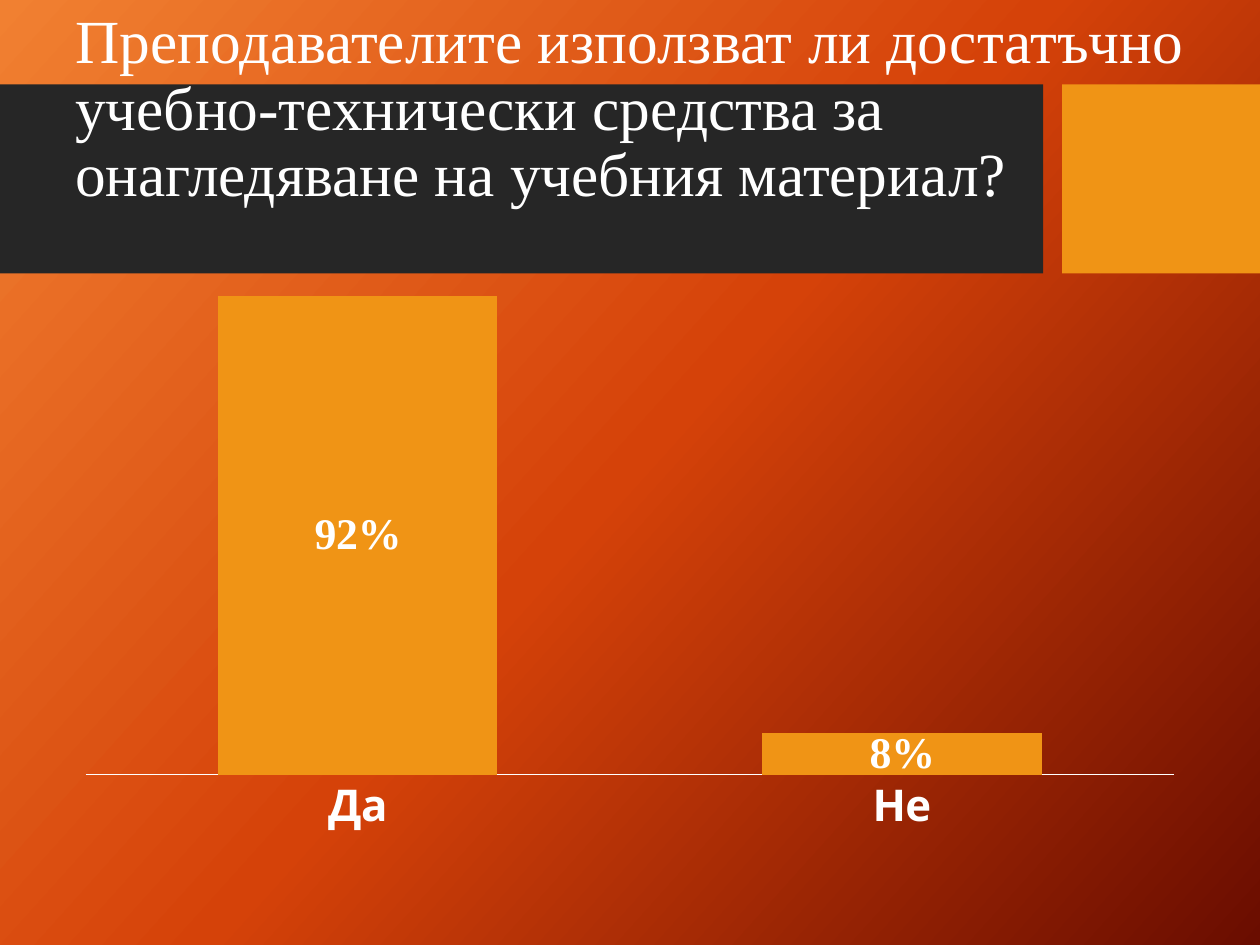
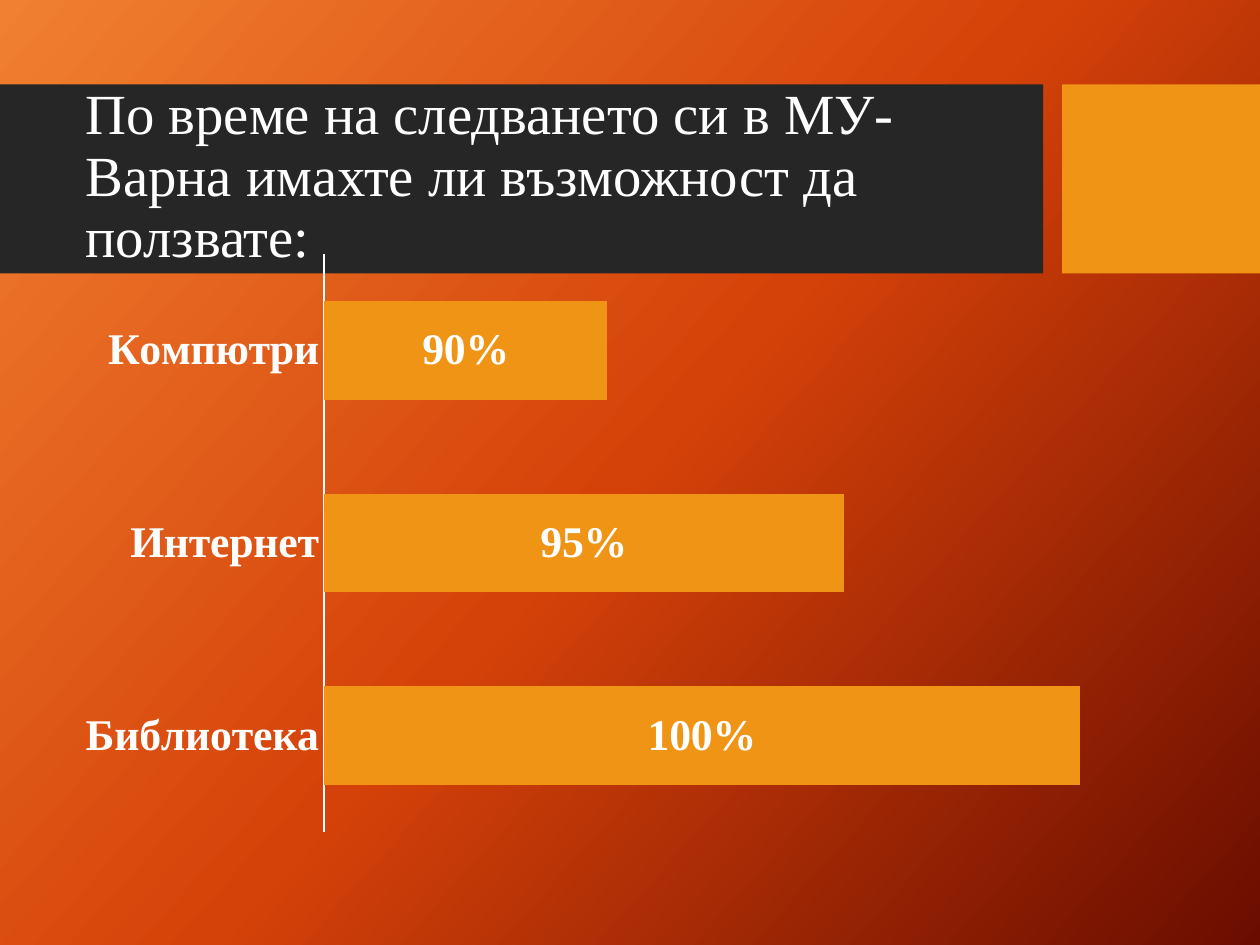
from copy import deepcopy

from pptx import Presentation
from pptx.chart.data import CategoryChartData
from pptx.dml.color import RGBColor
from pptx.enum.chart import XL_CHART_TYPE, XL_LABEL_POSITION, XL_TICK_MARK
from pptx.enum.shapes import MSO_SHAPE
from pptx.enum.text import MSO_ANCHOR
from pptx.util import Inches, Pt

WHITE, DARK, ORANGE = "FFFFFF", "262626", "F09415"
GRADIENT = [(0, "F18031"), (0.5, "D54209"), (1, "6A0D00")]
SERIF, SANS = "Times New Roman", "Cabin"


def color(value):
    """Turn a hex string into a colour."""
    return RGBColor.from_string(value)


def apply(target, values):
    """Set every attribute in a dict of format values."""
    for name, value in values.items():
        setattr(target, name, value)


class SurveyDeck:
    """Hold the survey style and the slide being built."""

    def __init__(self):
        """Start an empty 10 by 7.5 inch presentation."""
        self.presentation = Presentation()
        apply(self.presentation, {"slide_width": Inches(10), "slide_height": Inches(7.5)})
        self.slide = None

    def add_slide(self):
        """Add a slide with the gradient background and the title bands."""
        self.slide = self.presentation.slides.add_slide(self.presentation.slide_layouts[6])
        self.background()
        self.band(0, 8.28, DARK)
        self.band(8.43, 1.57, ORANGE)

    def background(self):
        """Fill the background with the three-colour diagonal gradient."""
        fill = self.slide.background.fill
        fill.gradient()
        fill.gradient_angle = 318
        first = fill.gradient_stops[0]._gs
        first.addnext(deepcopy(first))
        for stop, (position, value) in zip(fill.gradient_stops, GRADIENT):
            stop.color.rgb = color(value)
            stop.position = position

    def band(self, left, width, fill):
        """Draw one plain band at title height."""
        shape = self.slide.shapes.add_shape(
            MSO_SHAPE.RECTANGLE, Inches(left), Inches(0.67), Inches(width), Inches(1.5))
        shape.shadow.inherit = False
        shape.fill.solid()
        shape.fill.fore_color.rgb = color(fill)
        shape.line.fill.background()

    def font(self, font, size, name, bold=False):
        """Give a font its size, typeface, weight and the white colour."""
        apply(font, {"size": Pt(size), "name": name, "bold": bold})
        font.color.rgb = color(WHITE)

    def title(self, text, box, size):
        """Write the question in the given box."""
        frame = self.slide.shapes.add_textbox(*map(Inches, box)).text_frame
        apply(frame, {"word_wrap": True, "vertical_anchor": MSO_ANCHOR.MIDDLE})
        paragraph = frame.paragraphs[0]
        paragraph.line_spacing = 0.9
        run = paragraph.add_run()
        run.text = text
        self.font(run.font, size, SERIF)

    def chart(self, kind, answers, scale, category_font):
        """Plot the share of each answer as labelled bars."""
        data = CategoryChartData(number_format="0%")
        data.categories = list(answers)
        data.add_series("Series 1", list(answers.values()))
        chart = self.slide.shapes.add_chart(
            kind, Inches(0.5), Inches(1.92), Inches(9), Inches(4.78), data).chart
        apply(chart, {"has_legend": False, "has_title": False})
        self.font(chart.font, 18, SANS)

        axis = chart.category_axis
        apply(axis, {"major_tick_mark": XL_TICK_MARK.NONE, "minor_tick_mark": XL_TICK_MARK.NONE,
                     "has_major_gridlines": False})
        axis.format.line.width = Pt(0.75)
        axis.format.line.color.rgb = color(WHITE)
        self.font(axis.tick_labels.font, 25, category_font, True)

        minimum, maximum = scale
        apply(chart.value_axis, {"visible": False, "has_major_gridlines": False,
                                 "minimum_scale": minimum, "maximum_scale": maximum})

        plot = chart.plots[0]
        apply(plot, {"gap_width": 95, "overlap": 100, "vary_by_categories": False,
                     "has_data_labels": True})
        apply(plot.data_labels, {"show_value": True, "number_format": "0%",
                                 "number_format_is_linked": False,
                                 "position": XL_LABEL_POSITION.CENTER})
        self.font(plot.data_labels.font, 25, SERIF, True)
        fill = plot.series[0].format.fill
        fill.solid()
        fill.fore_color.rgb = color(ORANGE)


def main():
    """Build and save the two survey slides."""
    deck = SurveyDeck()

    deck.add_slide()
    deck.title("Преподавателите използват ли достатъчно учебно-технически средства "
               "за онагледяване на учебния материал?", (0.5, 0, 9, 1.75), 35)
    deck.chart(XL_CHART_TYPE.COLUMN_STACKED, {"Да": 0.92, "Не": 0.08}, (0, 1), SANS)

    deck.add_slide()
    deck.title("По време на следването си в МУ-Варна имахте ли възможност да ползвате:",
               (0.58, 0.82, 7.54, 1.18), 32.4)
    deck.chart(XL_CHART_TYPE.BAR_STACKED,
               {"Библиотека": 1, "Интернет": 0.95, "Компютри": 0.9}, (0.84, 1.02), SERIF)

    deck.presentation.save("out.pptx")


if __name__ == "__main__":
    main()
